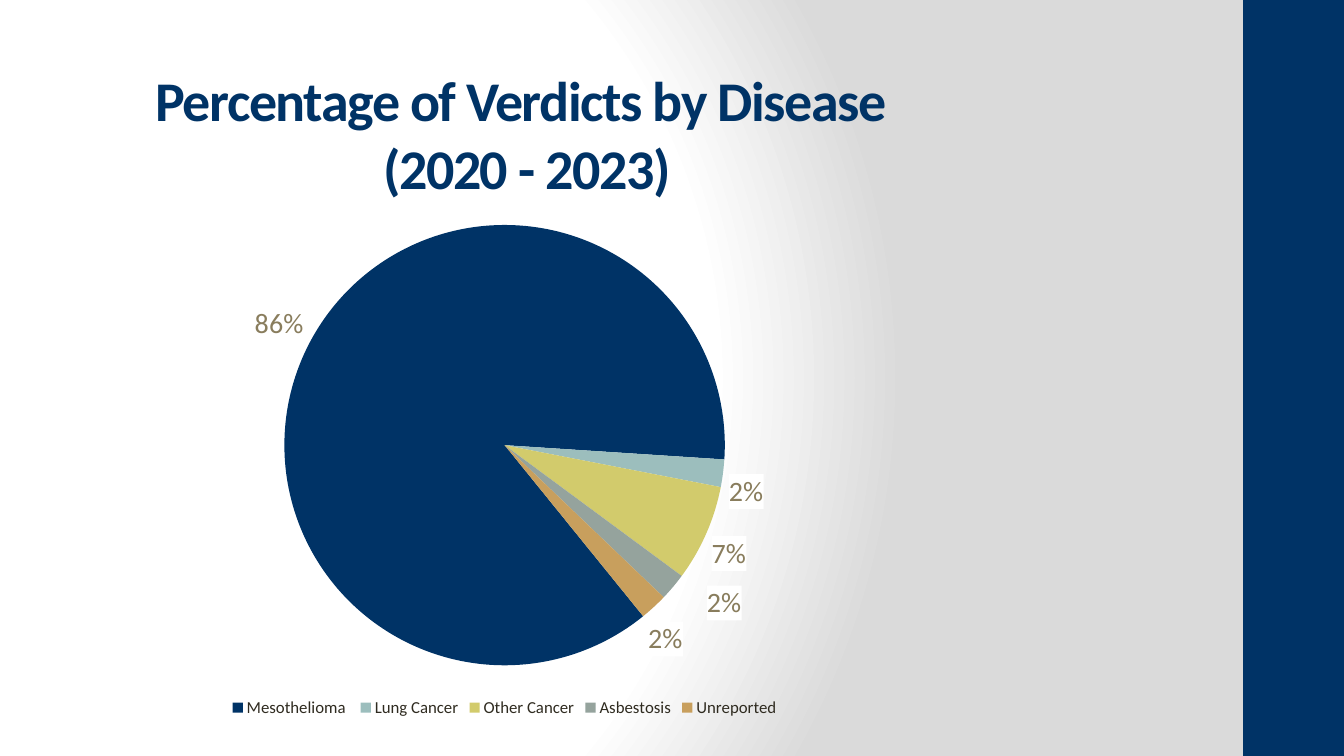
import copy
from dataclasses import dataclass

import pptx
import pptx.chart.data
import pptx.dml.color
import pptx.enum.chart
import pptx.enum.shapes
import pptx.enum.text
import pptx.oxml
import pptx.oxml.ns
import pptx.util
from pptx.util import Inches

qn = pptx.oxml.ns.qn


@dataclass(frozen=True)
class Theme:
    face: str = "Calibri"
    navy: str = "003366"
    white: str = "FFFFFF"
    gray: str = "DADADA"
    ink: str = "2F2B20"
    tan: str = "897D5D"
    title: int = 40
    label: int = 20
    legend: int = 12
    base: int = 10


THEME = Theme()

VERDICTS = [
    ("Mesothelioma ", 86, THEME.navy),
    ("Lung Cancer", 2, "9CBEBD"),
    ("Other Cancer", 7, "D2CB6C"),
    ("Asbestosis", 2, "95A39D"),
    ("Unreported", 2, "C89F5D"),
]

# Label offsets by slice, as fractions of the chart.
SHIFTS = {3: (0.03, -0.01), 4: (-0.01, 0.02)}


def paint(fill, color):
    fill.solid()
    fill.fore_color.rgb = pptx.dml.color.RGBColor.from_string(color)


def style(font, size, color, bold=False):
    font.name = THEME.face
    font.size = pptx.util.Pt(size)
    font.bold = bold
    font.color.rgb = pptx.dml.color.RGBColor.from_string(color)


def parse_xml(tag, body, attrs=""):
    """Build one element with the drawing and chart namespaces declared."""
    names = pptx.oxml.ns.nsdecls("a", "c")
    return pptx.oxml.parse_xml(f"<{tag} {names} {attrs}>{body}</{tag}>")


def add_glow(slide):
    """Fill the background with a round white-to-gray gradient."""
    slide.background.fill.gradient()
    grad = slide.element.find(".//" + qn("a:gradFill"))
    stops = [(0, THEME.white), (75, THEME.white), (100, THEME.gray)]
    marks = "".join(
        f'<a:gs pos="{pos * 1000}"><a:srgbClr val="{color}"/></a:gs>'
        for pos, color in stops
    )
    body = (
        f"<a:gsLst>{marks}</a:gsLst>"
        '<a:path path="circle"><a:fillToRect l="20000" t="50000"'
        ' r="100000" b="50000"/></a:path>'
    )
    grad.getparent().replace(grad, parse_xml("a:gradFill", body, 'rotWithShape="1"'))


def add_band(slide):
    band = slide.shapes.add_shape(
        pptx.enum.shapes.MSO_SHAPE.RECTANGLE,
        Inches(12.33), 0, Inches(1), Inches(7.5),
    )
    band.shadow.inherit = False
    paint(band.fill, THEME.navy)
    band.line.fill.background()


def add_title(slide, text):
    box = slide.shapes.add_textbox(
        Inches(-0.33), Inches(0.92), Inches(11.11), Inches(0.8)
    )
    frame = box.text_frame
    frame.word_wrap = True
    frame.vertical_anchor = pptx.enum.text.MSO_ANCHOR.MIDDLE
    line = frame.paragraphs[0]
    line.text = text
    line.alignment = pptx.enum.text.PP_ALIGN.CENTER
    for run in line.runs:
        style(run.font, THEME.title, THEME.navy, bold=True)
        run._r.get_or_add_rPr().set("spc", "-100")


def layout(**parts):
    """Build a manual chart layout from fractions of the chart."""
    marks = "".join(f'<c:{key} val="{val}"/>' for key, val in parts.items())
    return parse_xml("c:layout", f"<c:manualLayout>{marks}</c:manualLayout>")


def add_labels(plot):
    labels = plot.series[0].data_labels
    labels.show_value = True
    labels.number_format = '0"%"'
    labels.number_format_is_linked = False
    labels.position = pptx.enum.chart.XL_LABEL_POSITION.OUTSIDE_END
    style(labels.font, THEME.label, THEME.tan)
    root = labels._element
    back = f'<a:solidFill><a:srgbClr val="{THEME.white}"/></a:solidFill>'
    root.find(qn("c:txPr")).addprevious(parse_xml("c:spPr", back))
    for lead in root.findall(qn("c:showLeaderLines")):
        root.remove(lead)

    shared = list(root)
    for place, (index, (x, y)) in enumerate(SHIFTS.items()):
        moved = parse_xml("c:dLbl", f'<c:idx val="{index}"/>')
        moved.append(layout(x=x, y=y))
        for part in shared:
            moved.append(copy.deepcopy(part))
        root.insert(place, moved)
    root.append(parse_xml("c:showLeaderLines", "", 'val="0"'))


def add_pie(slide):
    data = pptx.chart.data.CategoryChartData()
    data.categories = [name for name, _, _ in VERDICTS]
    data.add_series("Series 1", [value for _, value, _ in VERDICTS])
    chart = slide.shapes.add_chart(
        pptx.enum.chart.XL_CHART_TYPE.PIE,
        Inches(0.17), Inches(2.08), Inches(9.67), Inches(5.08), data,
    ).chart
    chart.has_title = False
    style(chart.font, THEME.base, THEME.ink)
    chart.has_legend = True
    chart.legend.position = pptx.enum.chart.XL_LEGEND_POSITION.BOTTOM
    chart.legend.include_in_layout = False
    style(chart.legend.font, THEME.legend, THEME.ink)

    plot = chart.plots[0]
    plot.vary_by_categories = True
    for index, (_, _, color) in enumerate(VERDICTS):
        paint(plot.series[0].points[index].format.fill, color)
    add_labels(plot)

    pie = plot._element
    for old in pie.findall(qn("c:firstSliceAng")):
        pie.remove(old)
    pie.append(parse_xml("c:firstSliceAng", "", 'val="141"'))
    area = pie.getparent()
    for old in area.findall(qn("c:layout")):
        area.remove(old)
    area.insert(0, layout(
        layoutTarget="inner", xMode="edge", yMode="edge",
        x=0.27, y=0.03, w=0.46, h=0.86,
    ))


def main():
    deck = pptx.Presentation()
    deck.slide_width = Inches(13.33)
    deck.slide_height = Inches(7.5)
    slide = deck.slides.add_slide(deck.slide_layouts[6])
    add_glow(slide)
    add_band(slide)
    add_title(slide, "Percentage of Verdicts by Disease \v(2020 - 2023)")
    add_pie(slide)
    deck.save("out.pptx")


if __name__ == "__main__":
    main()
